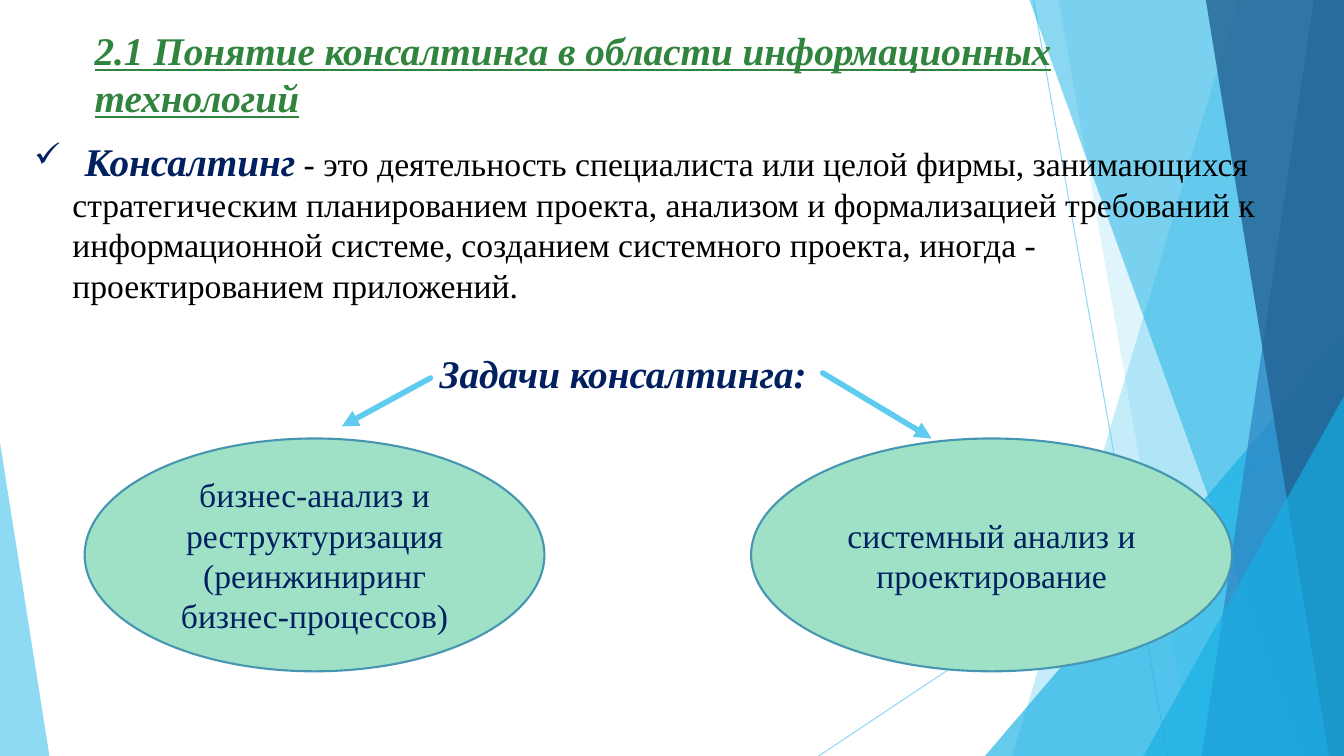
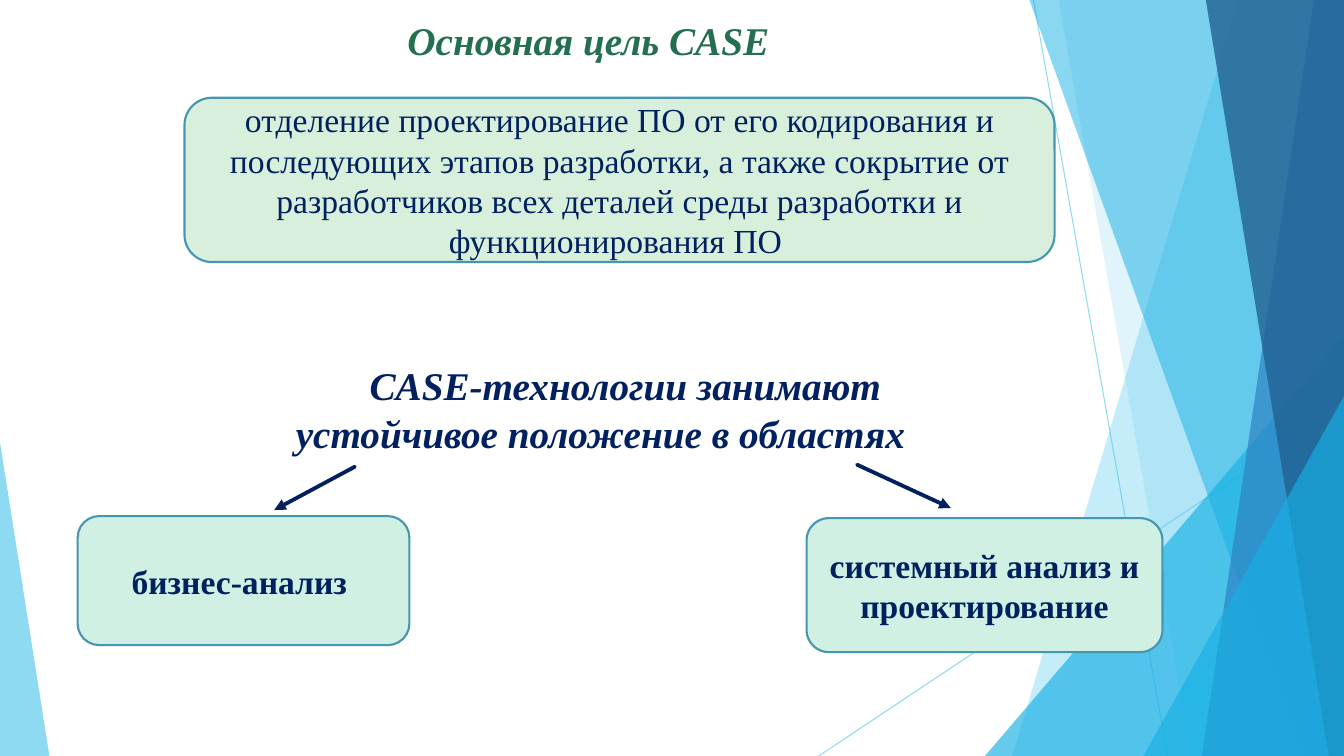
from lxml.etree import SubElement
from pptx import Presentation
from pptx.dml.color import RGBColor
from pptx.enum.shapes import MSO_CONNECTOR, MSO_SHAPE
from pptx.enum.text import MSO_ANCHOR, PP_ALIGN
from pptx.oxml.ns import qn
from pptx.util import Inches, Pt

FONT = "Times New Roman"
WIDTH, HEIGHT = 13.33, 7.5
HEADING_SIZE, BODY_SIZE = 28, 24

WHITE = RGBColor(0xFF, 0xFF, 0xFF)
BLACK = RGBColor(0x00, 0x00, 0x00)
NAVY = RGBColor(0x00, 0x20, 0x60)
GREEN = RGBColor(0x31, 0x84, 0x3D)
DARK_GREEN = RGBColor(0x23, 0x6F, 0x50)
SKY = RGBColor(0x5F, 0xCB, 0xEF)
AZURE = RGBColor(0x17, 0xB0, 0xE4)
BLUE = RGBColor(0x2E, 0x83, 0xC3)
DEEP_BLUE = RGBColor(0x22, 0x62, 0x92)
OUTLINE = RGBColor(0x46, 0x96, 0xB1)
MINT = RGBColor(0x9F, 0xE1, 0xC6)
PALE_GREEN = RGBColor(0xD8, 0xF0, 0xDB)
PALE_MINT = RGBColor(0xCF, 0xF0, 0xE3)

# Background facets, back to front: a band gives its left edge at top and bottom,
# a triangle gives its box and apex position
FACETS = [
    ("band", (12.28, 10.04), SKY, 36),
    ("band", (10.5, 11.82), SKY, 20),
    ("triangle", (9.77, 3.33, 3.56, 4.17, 1), AZURE, 66),
    ("band", (10.21, 12.91), AZURE, 50),
    ("band", (13.03, 11.92), BLUE, 70),
    ("band", (11.96, 13.18), DEEP_BLUE, 80),
    ("triangle", (11.34, 3.93, 1.99, 3.57, 1), AZURE, 66),
    ("triangle", (0, 4.39, 0.49, 3.11, 0), SKY, 70),
]


def set_opacity(shape, percent):
    color = shape._element.spPr.find(".//" + qn("a:srgbClr"))
    SubElement(color, qn("a:alpha"), val=str(percent * 1000))


class Deck:
    def __init__(self):
        self.presentation = Presentation()
        self.presentation.slide_width = Inches(WIDTH)
        self.presentation.slide_height = Inches(HEIGHT)
        self.slide = None

    def new_slide(self):
        self.slide = self.presentation.slides.add_slide(self.presentation.slide_layouts[6])
        self.slide.background.fill.solid()
        self.slide.background.fill.fore_color.rgb = WHITE
        self.backdrop()

    def backdrop(self):
        for start, end in (((10.25, 0), (11.58, HEIGHT)), ((WIDTH, 4.03), (8.12, HEIGHT))):
            set_opacity(self.line(start, end, SKY, 0.75), 70)
        for kind, geometry, color, opacity in FACETS:
            if kind == "band":
                top, bottom = geometry
                outline = self.slide.shapes.build_freeform(Inches(top), 0)
                corners = [(WIDTH, 0), (WIDTH, HEIGHT), (bottom, HEIGHT)]
                outline.add_line_segments([(Inches(x), Inches(y)) for x, y in corners])
                facet = outline.convert_to_shape()
            else:
                *box, apex = geometry
                facet = self.slide.shapes.add_shape(
                    MSO_SHAPE.ISOSCELES_TRIANGLE, *map(Inches, box))
                facet.adjustments[0] = apex
            self.paint(facet, color)
            set_opacity(facet, opacity)

    def paint(self, shape, color, outline=None):
        shape.shadow.inherit = False
        shape.fill.solid()
        shape.fill.fore_color.rgb = color
        if outline is None:
            shape.line.fill.background()
        else:
            shape.line.color.rgb = outline
            shape.line.width = Pt(1.5)

    def line(self, start, end, color, width):
        connector = self.slide.shapes.add_connector(
            MSO_CONNECTOR.STRAIGHT, *map(Inches, (*start, *end)))
        connector.line.color.rgb = color
        connector.line.width = Pt(width)
        SubElement(connector._element.spPr, qn("a:effectLst"))
        return connector

    def arrow(self, start, end, color, width):
        connector = self.line(start, end, color, width)
        stroke = connector._element.spPr.find(qn("a:ln"))
        stroke.set("cap", "rnd")
        SubElement(stroke, qn("a:round"))
        SubElement(stroke, qn("a:tailEnd"), type="triangle")

    def add_text(self, paragraph, text, size=BODY_SIZE, color=NAVY,
                 bold=False, italic=False, underline=False):
        run = paragraph.add_run()
        run.text = text
        font = run.font
        font.name, font.size, font.color.rgb = FONT, Pt(size), color
        font.bold, font.italic, font.underline = bold, italic, underline

    def text_box(self, box, align=PP_ALIGN.LEFT, margin=0, indent=0):
        frame = self.slide.shapes.add_textbox(*map(Inches, box)).text_frame
        frame.word_wrap = True
        paragraph = frame.paragraphs[0]
        paragraph.alignment = align
        properties = paragraph._p.get_or_add_pPr()
        properties.set("marL", str(Inches(margin)))
        properties.set("indent", str(Inches(indent)))
        return paragraph

    def heading(self, box, text, color=NAVY, align=PP_ALIGN.CENTER,
                underline=False, margin=0, indent=0):
        paragraph = self.text_box(box, align, margin, indent)
        self.add_text(paragraph, text, HEADING_SIZE, color, True, True, underline)
        return paragraph

    def checked_definition(self, box, term, definition):
        paragraph = self.text_box(box, margin=0.38, indent=-0.38)
        properties = paragraph._p.get_or_add_pPr()
        SubElement(properties, qn("a:buChar"), char="✓")
        tabs = SubElement(properties, qn("a:tabLst"))
        SubElement(tabs, qn("a:tab"), pos=str(Inches(0.5)), algn="l")
        self.add_text(paragraph, "\t", bold=True, italic=True)
        self.add_text(paragraph, term, HEADING_SIZE, bold=True, italic=True)
        self.add_text(paragraph, definition, color=BLACK)

    def bubble(self, kind, box, text, fill, bold=False):
        shape = self.slide.shapes.add_shape(kind, *map(Inches, box))
        self.paint(shape, fill, OUTLINE)
        frame = shape.text_frame
        frame.word_wrap = True
        frame.vertical_anchor = MSO_ANCHOR.MIDDLE
        paragraph = frame.paragraphs[0]
        paragraph.alignment = PP_ALIGN.CENTER
        self.add_text(paragraph, text, bold=bold)


def consulting_slide(deck):
    deck.new_slide()
    deck.heading((0.84, 0.21, 11.38, 1.44),
                 "2.1 Понятие консалтинга в области информационных технологий",
                 GREEN, PP_ALIGN.LEFT, underline=True)
    deck.checked_definition(
        (0.24, 1.31, 12.57, 1.78), "Консалтинг",
        " - это деятельность специалиста или целой фирмы, занимающихся стратегическим "
        "планированием проекта, анализом и формализацией требований к информационной "
        "системе, созданием системного проекта, иногда - проектированием приложений.")
    tasks = deck.heading((0.24, 3.18, 11.39, 0.72), "Задачи консалтинга:", margin=0.49)
    tasks.line_spacing = 1.5

    # Two tasks
    deck.bubble(MSO_SHAPE.OVAL, (0.84, 4.35, 4.56, 2.31),
                "бизнес-анализ и реструктуризация (реинжиниринг бизнес-процессов)", MINT)
    deck.bubble(MSO_SHAPE.OVAL, (7.45, 4.35, 4.77, 2.31),
                "системный анализ и проектирование", MINT)
    deck.arrow((4.27, 3.75), (3.39, 4.23), SKY, 4)
    deck.arrow((8.16, 3.7), (9.24, 4.35), SKY, 4)


def case_slide(deck):
    deck.new_slide()
    # Main goal
    deck.heading((1.58, 0.11, 8.51, 0.57), "Основная цель CASE", DARK_GREEN)
    deck.bubble(MSO_SHAPE.ROUNDED_RECTANGLE, (1.83, 0.97, 8.63, 1.63),
                "отделение проектирование ПО от его кодирования и последующих этапов "
                "разработки, а также сокрытие от разработчиков всех деталей среды "
                "разработки и функционирования ПО ", PALE_GREEN)

    # Areas of use
    deck.heading((2.62, 3.54, 6.67, 1.04),
                 "CASE-технологии занимают устойчивое положение в областях", indent=0.49)
    deck.bubble(MSO_SHAPE.ROUNDED_RECTANGLE, (0.77, 5.12, 3.29, 1.28),
                "бизнес-анализ ", PALE_MINT, bold=True)
    deck.bubble(MSO_SHAPE.ROUNDED_RECTANGLE, (8, 5.14, 3.53, 1.33),
                "системный анализ и проектирование", PALE_MINT, bold=True)
    deck.arrow((3.52, 4.63), (2.72, 5.06), NAVY, 2.75)
    deck.arrow((8.5, 4.61), (9.43, 5.04), NAVY, 2.75)


def main():
    deck = Deck()
    consulting_slide(deck)
    case_slide(deck)
    deck.presentation.save("out.pptx")


if __name__ == "__main__":
    main()
